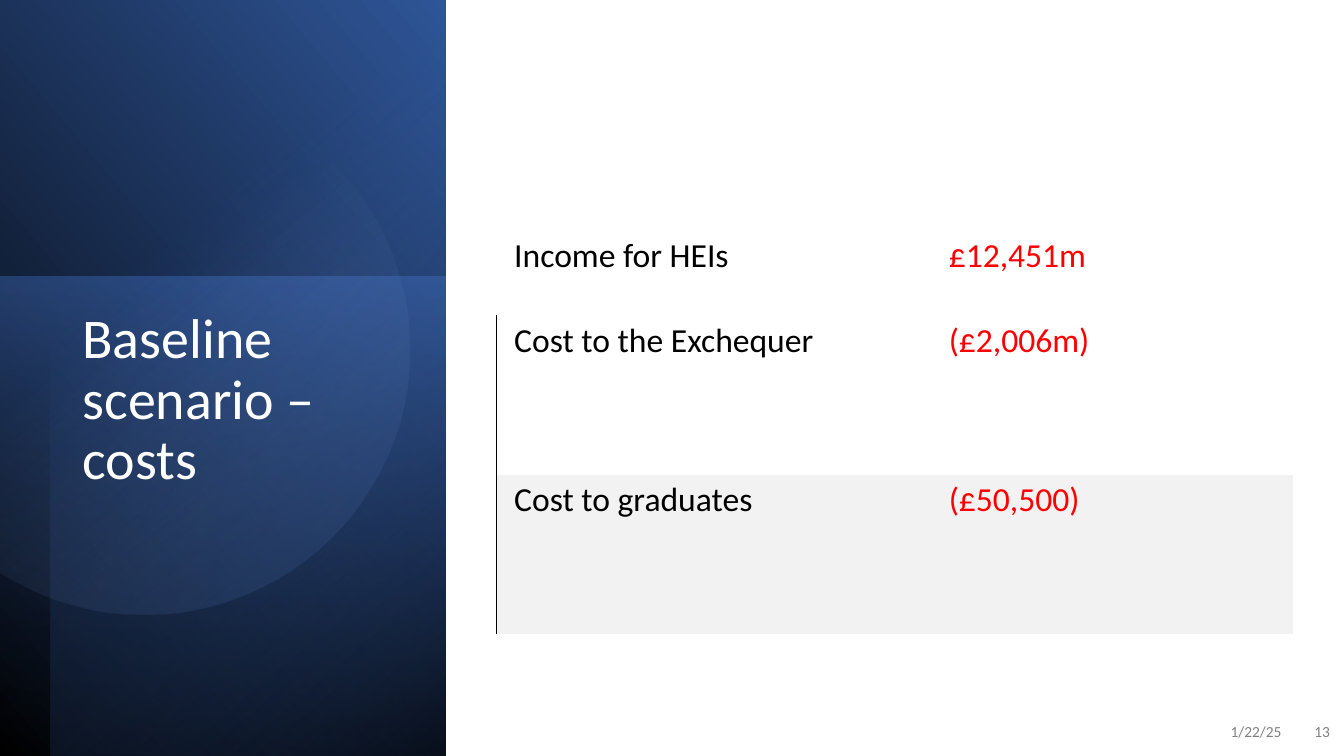
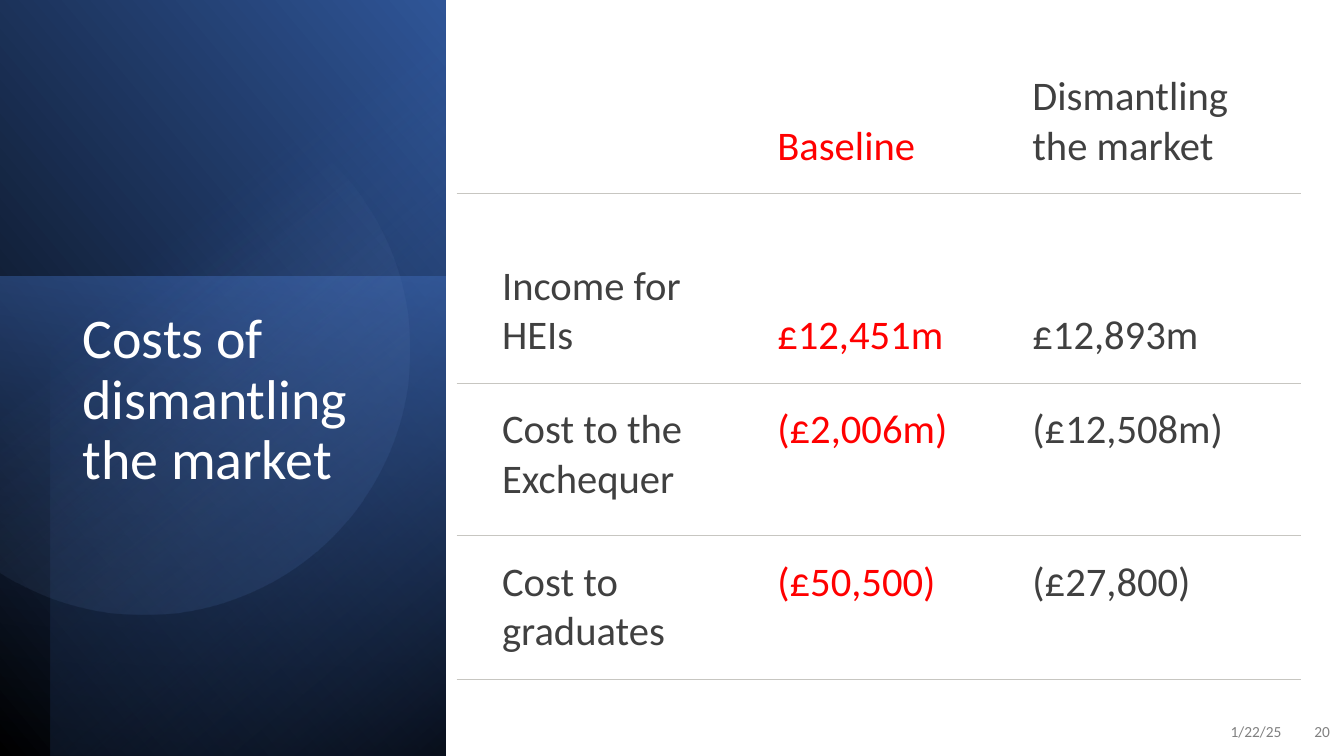
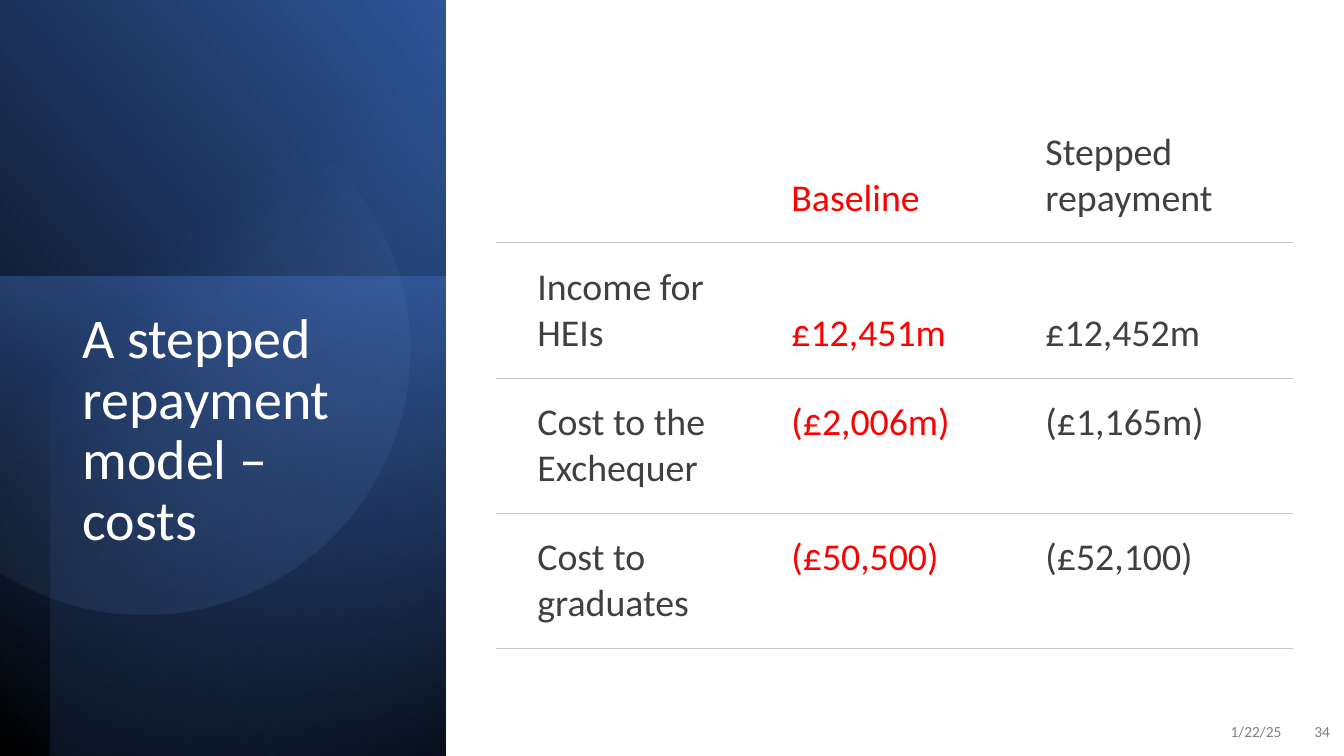
from math import acos, cos, degrees, radians, sin

from lxml import etree
from pptx import Presentation
from pptx.dml.color import RGBColor
from pptx.enum.shapes import MSO_SHAPE
from pptx.enum.text import MSO_ANCHOR, PP_ALIGN
from pptx.oxml.ns import qn
from pptx.util import Inches, Pt

RECTANGLE = MSO_SHAPE.RECTANGLE
TOP, MIDDLE, BOTTOM = MSO_ANCHOR.TOP, MSO_ANCHOR.MIDDLE, MSO_ANCHOR.BOTTOM
LEFT, RIGHT = PP_ALIGN.LEFT, PP_ALIGN.RIGHT

FONT = "Calibri"
BLACK, WHITE, RED = "000000", "FFFFFF", "FF0000"
DARK_GREY, MID_GREY, RULE_GREY, ROW_GREY = "404040", "808080", "C7C6C1", "F2F2F2"
NAVY, BLUE, PALE_BLUE, DEEP_BLUE = "2F5597", "4472C4", "8FAADC", "203864"
DATE = "1/22/25"
PLAIN_TABLE_STYLE = "{2D5ABB26-0587-4C30-8999-92F81FD0307C}"

# Panel layers: box, rotation, flipped, gradient stops (position, colour, opacity), angle
PANEL_LAYERS = [
    ((-1.55, 1.55, 7.52, 4.42), 90, True, [(0, BLACK, 100), (100, NAVY, 100)], 310),
    ((-0.17, 2.91, 4.76, 4.42), 270, False, [(0, BLUE, 50), (100, DEEP_BLUE, 0)], 190),
    ((-1.29, 1.79, 7.5, 3.92), 270, True, [(0, BLACK, 59), (69, BLUE, 0)], 220),
]
# Disc cut off by the left edge of the slide
DISC_X, DISC_Y, DISC_RADIUS = 1.43, 3.47, 2.63
DISC_STOPS = [(39, PALE_BLUE, 0), (100, NAVY, 26)]


def rgb(value):
    return RGBColor.from_string(value)


def style_paragraph(paragraph, size, color):
    paragraph.font.name = FONT
    paragraph.font.size = Pt(size)
    paragraph.font.color.rgb = rgb(color)


def set_gradient(shape, stops, angle):
    shape.shadow.inherit = False
    shape.line.fill.background()
    shape.fill.gradient()
    gradient = shape._element.spPr.find(qn("a:gradFill"))
    gradient.set("rotWithShape", "1")
    for child in list(gradient):
        gradient.remove(child)
    stop_list = etree.SubElement(gradient, qn("a:gsLst"))
    for position, color, opacity in stops:
        stop = etree.SubElement(stop_list, qn("a:gs"), pos=str(position * 1000))
        stop_color = etree.SubElement(stop, qn("a:srgbClr"), val=color)
        etree.SubElement(stop_color, qn("a:alpha"), val=str(opacity * 1000))
    etree.SubElement(gradient, qn("a:lin"), ang=str(angle * 60000), scaled="0")


def add_panel(slide):
    for box, rotation, flipped, stops, angle in PANEL_LAYERS:
        layer = slide.shapes.add_shape(RECTANGLE, *map(Inches, box))
        layer.rotation = rotation
        if flipped:
            layer._element.spPr.find(qn("a:xfrm")).set("flipH", "1")
        set_gradient(layer, stops, angle)

    # Arc from the upper to the lower crossing with the slide edge
    limit = degrees(acos(-DISC_X / DISC_RADIUS))
    steps = 120
    angles = [radians(limit * (2 * i / steps - 1)) for i in range(steps + 1)]
    points = [(Inches(DISC_X + DISC_RADIUS * cos(a)),
               Inches(DISC_Y + DISC_RADIUS * sin(a))) for a in angles]
    outline = slide.shapes.build_freeform(*points[0])
    outline.add_line_segments(points[1:], close=True)
    set_gradient(outline.convert_to_shape(), DISC_STOPS, 52)


def add_text(slide, box, text, size, color, align=LEFT, anchor=TOP, spacing=1.0):
    frame = slide.shapes.add_textbox(*map(Inches, box)).text_frame
    frame.word_wrap = True
    frame.vertical_anchor = anchor
    paragraph = frame.paragraphs[0]
    paragraph.text = text
    paragraph.alignment = align
    paragraph.line_spacing = spacing
    style_paragraph(paragraph, size, color)


def add_border(cell, side, color):
    line = etree.Element(qn(f"a:{side}"), w=str(Pt(0.75)))
    fill = etree.SubElement(line, qn("a:solidFill"))
    etree.SubElement(fill, qn("a:srgbClr"), val=color)
    cell._tc.get_or_add_tcPr().insert(0, line)


def add_cost_table(slide, corner, widths, heights, rows, size, margins, colors, bottom_rows):
    """Add the figures; the first bottom_rows rows sit at the foot of their cells."""
    frame = slide.shapes.add_table(
        len(rows), len(widths), *map(Inches, (*corner, sum(widths), sum(heights))))
    table = frame.table
    table.first_row = table.horz_banding = False
    table._tbl.tblPr.find(qn("a:tableStyleId")).text = PLAIN_TABLE_STYLE
    for column, width in zip(table.columns, widths):
        column.width = Inches(width)
    for row, height in zip(table.rows, heights):
        row.height = Inches(height)
    for r, texts in enumerate(rows):
        for c, text in enumerate(texts):
            cell = table.cell(r, c)
            cell.fill.background()
            (cell.margin_left, cell.margin_top,
             cell.margin_right, cell.margin_bottom) = map(Inches, margins)
            cell.vertical_anchor = BOTTOM if r < bottom_rows else TOP
            paragraph = cell.text_frame.paragraphs[0]
            paragraph.text = text
            style_paragraph(paragraph, size, colors[c])
    return table


def add_cost_slide(prs, title, number):
    slide = prs.slides.add_slide(prs.slide_layouts[6])
    add_panel(slide)
    add_text(slide, (0.72, 3.03, 3.15, 3.36), title, 40, WHITE, spacing=0.9)
    for box, text in [((9.81, 7.06, 3, 0.4), DATE), ((12.8, 7.06, 0.49, 0.4), number)]:
        add_text(slide, box, text, 11, MID_GREY, RIGHT, MIDDLE)
    return slide


def add_baseline(prs, baseline):
    slide = add_cost_slide(prs, "Baseline scenario – costs", "13")
    table = add_cost_table(slide, (4.92, 1.21), [4.31, 3.59], [1.92, 1.58, 1.58], baseline,
                           24, (0.18, 0.05, 0.47, 0.39), [BLACK, RED], 1)
    for r in (1, 2):
        add_border(table.cell(r, 0), "lnL", BLACK)
    for c in (0, 1):
        shaded = table.cell(2, c)
        shaded.fill.solid()
        shaded.fill.fore_color.rgb = rgb(ROW_GREY)


def add_comparison(prs, title, number, baseline, option, corner, widths, heights, size, margins):
    slide = add_cost_slide(prs, title, number)
    rows = [(*row, value) for row, value in zip([("", "Baseline"), *baseline], option)]
    table = add_cost_table(slide, corner, widths, heights, rows, size, margins,
                           [DARK_GREY, RED, DARK_GREY], 2)
    for cell in table.iter_cells():
        add_border(cell, "lnB", RULE_GREY)


def main():
    prs = Presentation()
    prs.slide_width, prs.slide_height = Inches(13.33), Inches(7.5)

    baseline = [
        ("Income for HEIs", "£12,451m"),
        ("Cost to the Exchequer", "(£2,006m)"),
        ("Cost to graduates", "(£50,500)"),
    ]
    add_baseline(prs, baseline)
    add_comparison(
        prs, "Costs of dismantling the market", "20", baseline,
        ["Dismantling the market", "£12,893m", "(£12,508m)", "(£27,800)"],
        (4.53, 0.04), [2.73, 2.53, 3.11], [1.88, 1.88, 1.51, 1.43],
        29, (0.45, 0.22, 0.34, 0.22))
    add_comparison(
        prs, "A stepped repayment model – costs", "34", baseline,
        ["Stepped repayment", "£12,452m", "(£1,165m)", "(£52,100)"],
        (4.92, 1.07), [2.52, 2.52, 2.86], [1.34] * 4,
        27, (0.41, 0.21, 0.31, 0.21))

    prs.save("out.pptx")


if __name__ == "__main__":
    main()
